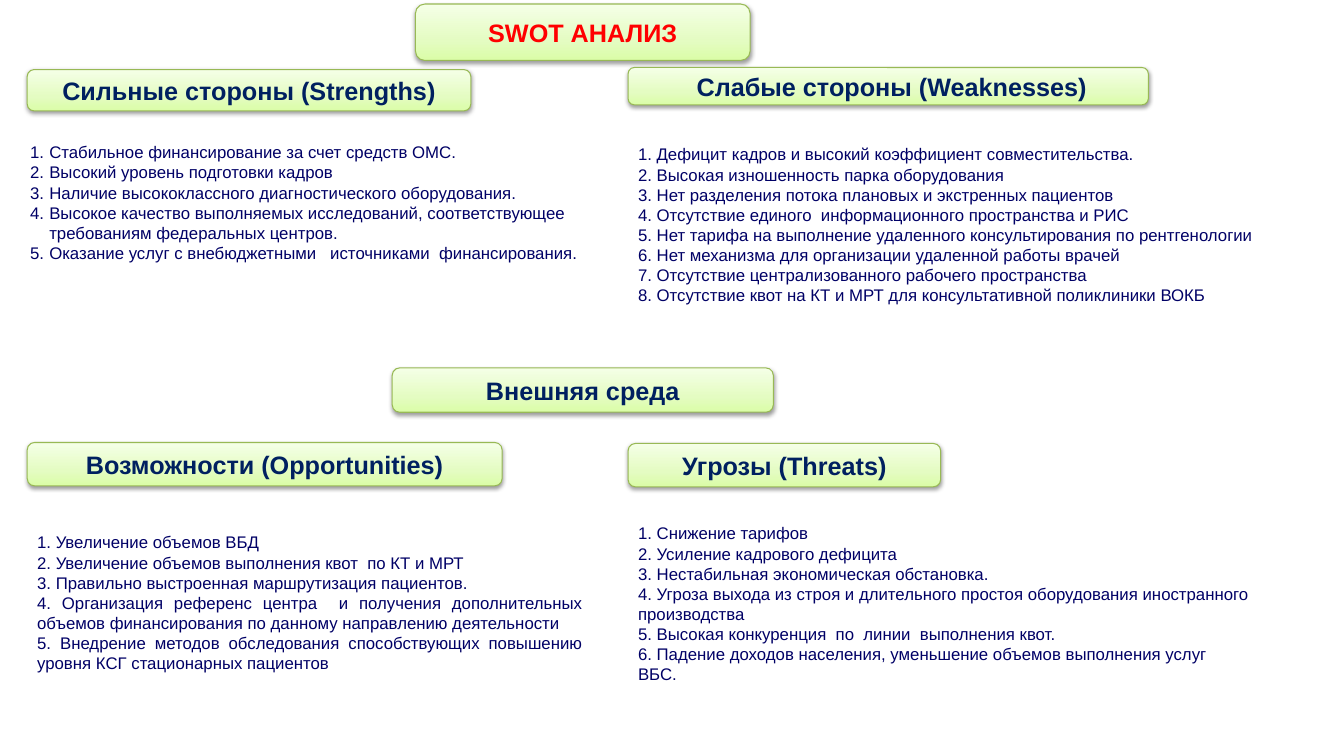
from dataclasses import dataclass

from lxml import etree
from pptx import Presentation
from pptx.dml.color import RGBColor
from pptx.enum.shapes import MSO_SHAPE
from pptx.enum.text import MSO_ANCHOR, MSO_AUTO_SIZE, PP_ALIGN
from pptx.oxml import parse_xml
from pptx.oxml.ns import qn
from pptx.slide import Slide
from pptx.util import Inches, Pt

ROUNDED = MSO_SHAPE.ROUNDED_RECTANGLE
MIDDLE = MSO_ANCHOR.MIDDLE
GROW = MSO_AUTO_SIZE.SHAPE_TO_FIT_TEXT
LEFT, CENTER, JUSTIFY = PP_ALIGN.LEFT, PP_ALIGN.CENTER, PP_ALIGN.JUSTIFY

FONT = "Arial"
COLORS = {
    "title": "FF0000",
    "heading": "002060",
    "body": "000066",
    "border": "98B955",
    "fill_bottom": "DAFDA7",
    "fill_middle": "E4FCC2",
    "fill_top": "F5FFE7",
    "shadow": "000000",
}
GRADIENT = [(0, "fill_bottom"), (35, "fill_middle"), (100, "fill_top")]
DRAWING_NS = "http://schemas.openxmlformats.org/drawingml/2006/main"
LEFT_COLUMN = 0.27
RIGHT_COLUMN = 6.23


@dataclass
class Heading:
    text: str
    left: float
    top: float
    width: float
    height: float
    color: str = "heading"


@dataclass
class NumberedList:
    items: list[str]
    left: float
    top: float
    width: float
    height: float
    align: PP_ALIGN = LEFT
    hanging: float = 0


HEADINGS = [
    Heading("SWOT АНАЛИЗ", 4.12, 0.04, 3.32, 0.56, "title"),
    Heading("Сильные стороны (Strengths)", LEFT_COLUMN, 0.69, 4.4, 0.41),
    Heading(" Слабые стороны (Weaknesses)", RIGHT_COLUMN, 0.67, 5.16, 0.37),
    Heading("Внешняя среда", 3.89, 3.65, 3.78, 0.44),
    Heading("Возможности (Opportunities)", LEFT_COLUMN, 4.39, 4.71, 0.43),
    Heading("Угрозы (Threats)", RIGHT_COLUMN, 4.4, 3.1, 0.43),
]

LISTS = [
    NumberedList([
        "Стабильное финансирование за счет средств ОМС.",
        "Высокий уровень подготовки кадров",
        "Наличие высококлассного диагностического оборудования.",
        "Высокое качество выполняемых исследований, соответствующее требованиям федеральных центров.",
        "Оказание услуг с внебюджетными   источниками  финансирования.",
    ], 0.2, 1.36, 5.69, 1.72, hanging=0.19),
    NumberedList([
        " Дефицит кадров и высокий коэффициент совместительства.",
        " Высокая изношенность парка оборудования",
        " Нет разделения потока плановых и экстренных пациентов",
        " Отсутствие единого  информационного пространства и РИС",
        " Нет тарифа на выполнение удаленного консультирования по рентгенологии",
        " Нет механизма для организации удаленной работы врачей",
        " Отсутствие централизованного рабочего пространства",
        " Отсутствие квот на КТ и МРТ для консультативной поликлиники ВОКБ",
    ], RIGHT_COLUMN, 1.38, 7.43, 2.12, JUSTIFY),
    NumberedList([
        " Увеличение объемов ВБД",
        " Увеличение объемов выполнения квот  по КТ и МРТ",
        " Правильно выстроенная маршрутизация пациентов.",
        " Организация референс центра  и получения дополнительных объемов финансирования "
        "по данному направлению деятельности",
        " Внедрение методов обследования способствующих повышению уровня КСГ стационарных пациентов",
    ], LEFT_COLUMN, 5.23, 5.61, 1.51, JUSTIFY),
    NumberedList([
        " Снижение тарифов",
        " Усиление кадрового дефицита",
        " Нестабильная экономическая обстановка.",
        " Угроза выхода из строя и длительного простоя оборудования иностранного производства",
        " Высокая конкуренция  по  линии  выполнения квот.",
        " Падение доходов населения, уменьшение объемов выполнения услуг  ВБС.",
    ], RIGHT_COLUMN, 5.14, 6.31, 2.12),
]


def rgb(name: str) -> RGBColor:
    return RGBColor.from_string(COLORS[name])


def draw_heading(page: Slide, heading: Heading) -> None:
    box = page.shapes.add_shape(
        ROUNDED, Inches(heading.left), Inches(heading.top),
        Inches(heading.width), Inches(heading.height))
    box.fill.gradient()
    box.fill.gradient_angle = 90
    properties = box._element.spPr
    stops = properties.find(".//" + qn("a:gsLst"))
    for stop in list(stops):
        stops.remove(stop)
    for position, name in GRADIENT:
        stop = etree.SubElement(stops, qn("a:gs"), pos=str(position * 1000))
        etree.SubElement(stop, qn("a:srgbClr"), val=COLORS[name])
    box.line.color.rgb = rgb("border")
    box.line.width = Pt(0.75)
    box.shadow.inherit = False
    properties.find(qn("a:effectLst")).append(parse_xml(
        f'<a:outerShdw xmlns:a="{DRAWING_NS}" blurRad="{Pt(3.1)}" dist="{Pt(1.6)}" '
        f'dir="5400000" rotWithShape="0"><a:srgbClr val="{COLORS["shadow"]}">'
        '<a:alpha val="38000"/></a:srgbClr></a:outerShdw>'))

    frame = box.text_frame
    frame.text = heading.text
    frame.word_wrap = True
    frame.vertical_anchor = MIDDLE
    para = frame.paragraphs[0]
    para.alignment = CENTER
    span = para.runs[0]
    span.font.name = FONT
    span.font.size = Pt(18)
    span.font.bold = True
    span.font.color.rgb = rgb(heading.color)


def draw_list(page: Slide, numbered: NumberedList) -> None:
    box = page.shapes.add_textbox(
        Inches(numbered.left), Inches(numbered.top),
        Inches(numbered.width), Inches(numbered.height))
    frame = box.text_frame
    frame.word_wrap = True
    frame.auto_size = GROW
    frame.text = "\n".join(numbered.items)
    for para in frame.paragraphs:
        para.alignment = numbered.align
        settings = para._p.get_or_add_pPr()
        settings.set("marL", str(Inches(numbered.hanging)))
        settings.set("indent", str(-Inches(numbered.hanging)))
        etree.SubElement(settings, qn("a:buFont"), typeface=FONT)
        etree.SubElement(settings, qn("a:buAutoNum"), type="arabicPeriod")
        span = para.runs[0]
        span.font.name = FONT
        span.font.size = Pt(12)
        span.font.color.rgb = rgb("body")


def main() -> None:
    deck = Presentation()
    deck.slide_width = Inches(13.33)
    deck.slide_height = Inches(7.5)
    page = deck.slides.add_slide(deck.slide_layouts[6])
    for numbered in LISTS:
        draw_list(page, numbered)
    for heading in HEADINGS:
        draw_heading(page, heading)
    deck.save("out.pptx")


if __name__ == "__main__":
    main()
